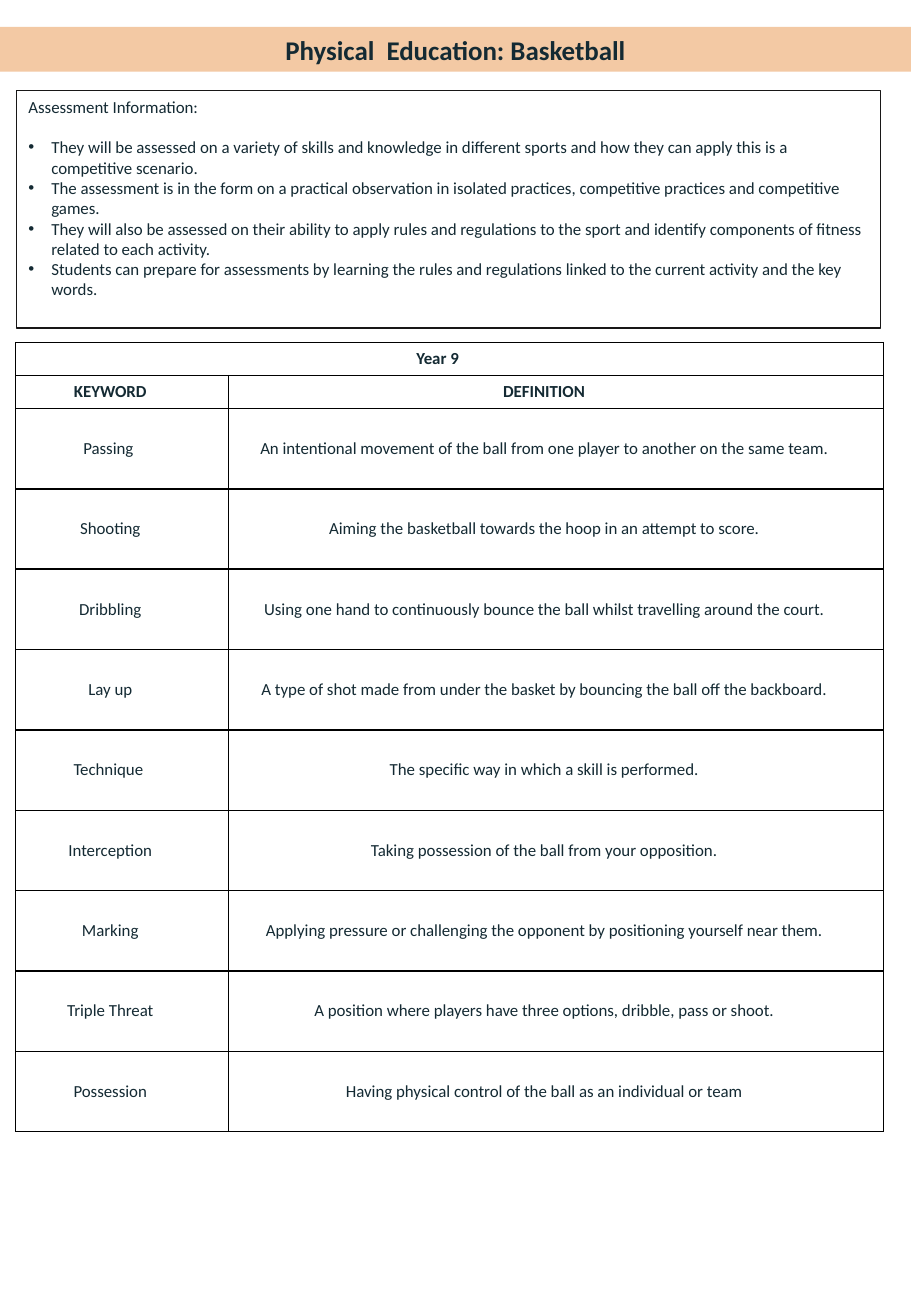
"""Build the basketball knowledge sheet with its assessment notes and keyword table."""
from typing import NamedTuple

from lxml import etree
from pptx import Presentation
from pptx import util as u
from pptx.dml.color import RGBColor
from pptx.enum import text
from pptx.oxml import ns

INK = RGBColor(0x14, 0x2A, 0x33)
PEACH = RGBColor(0xF3, 0xC9, 0xA4)
FRAME = RGBColor(0x18, 0x17, 0x17)
GRID = RGBColor(0x00, 0x00, 0x00)
FONT = "Calibri"
COLUMN_WIDTHS = (u.Cm(4.45), u.Cm(13.69))
HEADING_HEIGHT = u.Cm(0.69)
ENTRY_HEIGHT = u.Cm(1.68)
BULLET_INDENT = u.Cm(0.48)


class Box(NamedTuple):
    left: float
    top: float
    width: float
    height: float


class Entry(NamedTuple):
    keyword: str
    definition: str
    bold: bool = False


TITLE_BOX = Box(0, 0.56, 19.05, 0.94)
NOTES_BOX = Box(0.34, 1.89, 18.08, 4.97)
TABLE_BOX = Box(0.33, 7.16, 18.14, 16.5)

NOTES_HEADING = "Assessment Information:"
NOTES = (
    "They will be assessed on a variety of skills and knowledge in different sports and how they can apply this is a competitive scenario.",
    "The assessment is in the form on a practical observation in isolated practices, competitive practices and competitive games.",
    "They will also be assessed on their ability to apply rules and regulations to the sport and identify components of fitness related to each activity.",
    "Students can prepare for assessments by learning the rules and regulations linked to the current activity and the key words.",
)
ENTRIES = (
    Entry("KEYWORD", "DEFINITION", bold=True),
    Entry("Passing ", "An intentional movement of the ball from one player to another on the same team."),
    Entry("Shooting", "Aiming the basketball towards the hoop in an attempt to score."),
    Entry("Dribbling", "Using one hand to continuously bounce the ball whilst travelling around the court."),
    Entry("Lay up", "A type of shot made from under the basket by bouncing the ball off the backboard."),
    Entry("Technique ", "The specific way in which a skill is performed."),
    Entry("Interception", "Taking possession of the ball from your opposition."),
    Entry("Marking", "Applying pressure or challenging the opponent by positioning yourself near them."),
    Entry("Triple Threat", "A position where players have three options, dribble, pass or shoot."),
    Entry("Possession", "Having physical control of the ball as an individual or team"),
)


def lengths(box: Box) -> list[u.Length]:
    return [u.Cm(value) for value in box]


def place(shape, box: Box) -> None:
    shape.left, shape.top, shape.width, shape.height = lengths(box)
    shape.text_frame.word_wrap = True
    shape.text_frame.auto_size = text.MSO_AUTO_SIZE.NONE


def add_run(paragraph, words: str, size: float = 10, bold: bool = False) -> None:
    run = paragraph.add_run()
    run.text = words
    run.font.name = FONT
    run.font.size = u.Pt(size)
    run.font.bold = bold
    run.font.color.rgb = INK


def set_bullet(paragraph, bulleted: bool) -> None:
    properties = paragraph._p.get_or_add_pPr()
    indent = BULLET_INDENT if bulleted else 0
    properties.set("marL", str(int(indent)))
    properties.set("indent", str(-int(indent)))
    if bulleted:
        etree.SubElement(properties, ns.qn("a:buFont"), typeface="Arial")
        etree.SubElement(properties, ns.qn("a:buChar"), char="•")
    else:
        etree.SubElement(properties, ns.qn("a:buNone"))


def draw_title(shape) -> None:
    place(shape, TITLE_BOX)
    shape.fill.solid()
    shape.fill.fore_color.rgb = PEACH
    shape.text_frame.vertical_anchor = text.MSO_ANCHOR.MIDDLE
    paragraph = shape.text_frame.paragraphs[0]
    paragraph.alignment = text.PP_ALIGN.CENTER
    add_run(paragraph, "Physical  Education: Basketball", size=16, bold=True)


def draw_notes(shape) -> None:
    place(shape, NOTES_BOX)
    shape.line.color.rgb = FRAME
    shape.line.width = u.Pt(0.75)
    frame = shape.text_frame
    frame.vertical_anchor = text.MSO_ANCHOR.TOP
    for index, words in enumerate((NOTES_HEADING, *NOTES)):
        paragraph = frame.add_paragraph() if index else frame.paragraphs[0]
        set_bullet(paragraph, bulleted=index > 0)
        paragraph.space_before = u.Pt(12 if index == 1 else 0)
        add_run(paragraph, words)


def set_borders(cell) -> None:
    properties = cell._tc.get_or_add_tcPr()
    for side in ("a:lnL", "a:lnR", "a:lnT", "a:lnB"):
        line = etree.SubElement(properties, ns.qn(side), w=str(int(u.Pt(1))))
        fill = etree.SubElement(line, ns.qn("a:solidFill"))
        etree.SubElement(fill, ns.qn("a:srgbClr"), val=str(GRID))


def format_cell(cell) -> None:
    set_borders(cell)
    cell.fill.background()
    cell.vertical_anchor = text.MSO_ANCHOR.MIDDLE
    cell.margin_left, cell.margin_right = u.Cm(0.18), u.Cm(0.68)
    cell.margin_top = cell.margin_bottom = 0


def write_cell(cell, words: str, bold: bool) -> None:
    paragraph = cell.text_frame.paragraphs[0]
    paragraph.alignment = text.PP_ALIGN.CENTER
    paragraph.space_after = u.Pt(6)
    add_run(paragraph, words, bold=bold)


def draw_table(slide) -> None:
    rows = len(ENTRIES) + 1
    table = slide.shapes.add_table(rows, len(COLUMN_WIDTHS), *lengths(TABLE_BOX)).table
    table.first_row = table.horz_banding = False
    for column, width in zip(table.columns, COLUMN_WIDTHS):
        column.width = width
    for index, row in enumerate(table.rows):
        row.height = HEADING_HEIGHT if index < 2 else ENTRY_HEIGHT
    for cell in table.iter_cells():
        format_cell(cell)
    year_cell = table.cell(0, 0)
    year_cell.merge(table.cell(0, 1))
    write_cell(year_cell, "Year 9", bold=True)
    for index, entry in enumerate(ENTRIES, start=1):
        write_cell(table.cell(index, 0), entry.keyword, entry.bold)
        write_cell(table.cell(index, 1), entry.definition, entry.bold)


def main() -> None:
    presentation = Presentation()
    presentation.slide_width = u.Cm(19.05)
    presentation.slide_height = u.Cm(27.51)
    slide = presentation.slides.add_slide(presentation.slide_layouts[1])
    draw_title(slide.shapes.title)
    draw_notes(slide.placeholders[1])
    draw_table(slide)
    presentation.save("out.pptx")


if __name__ == "__main__":
    main()
